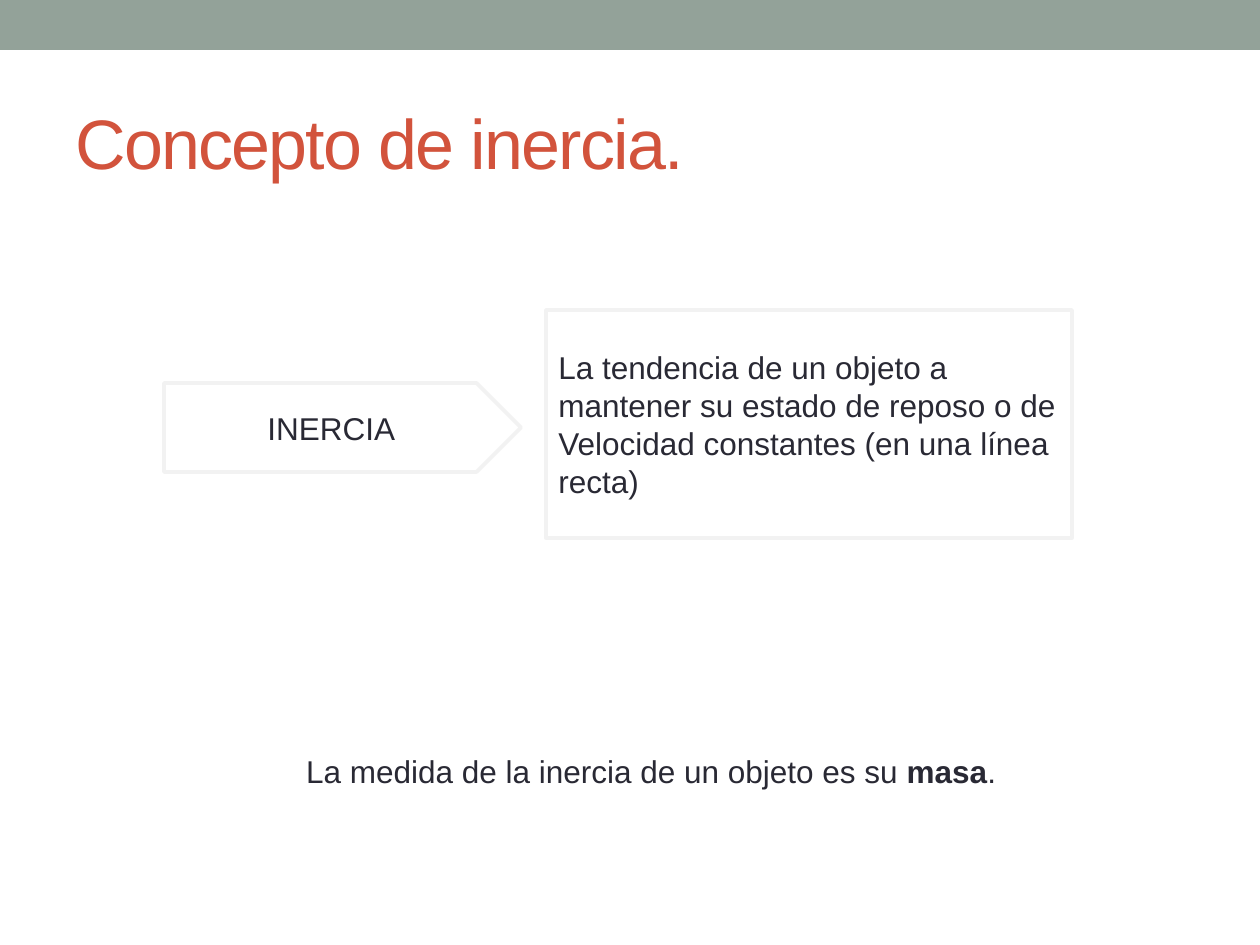
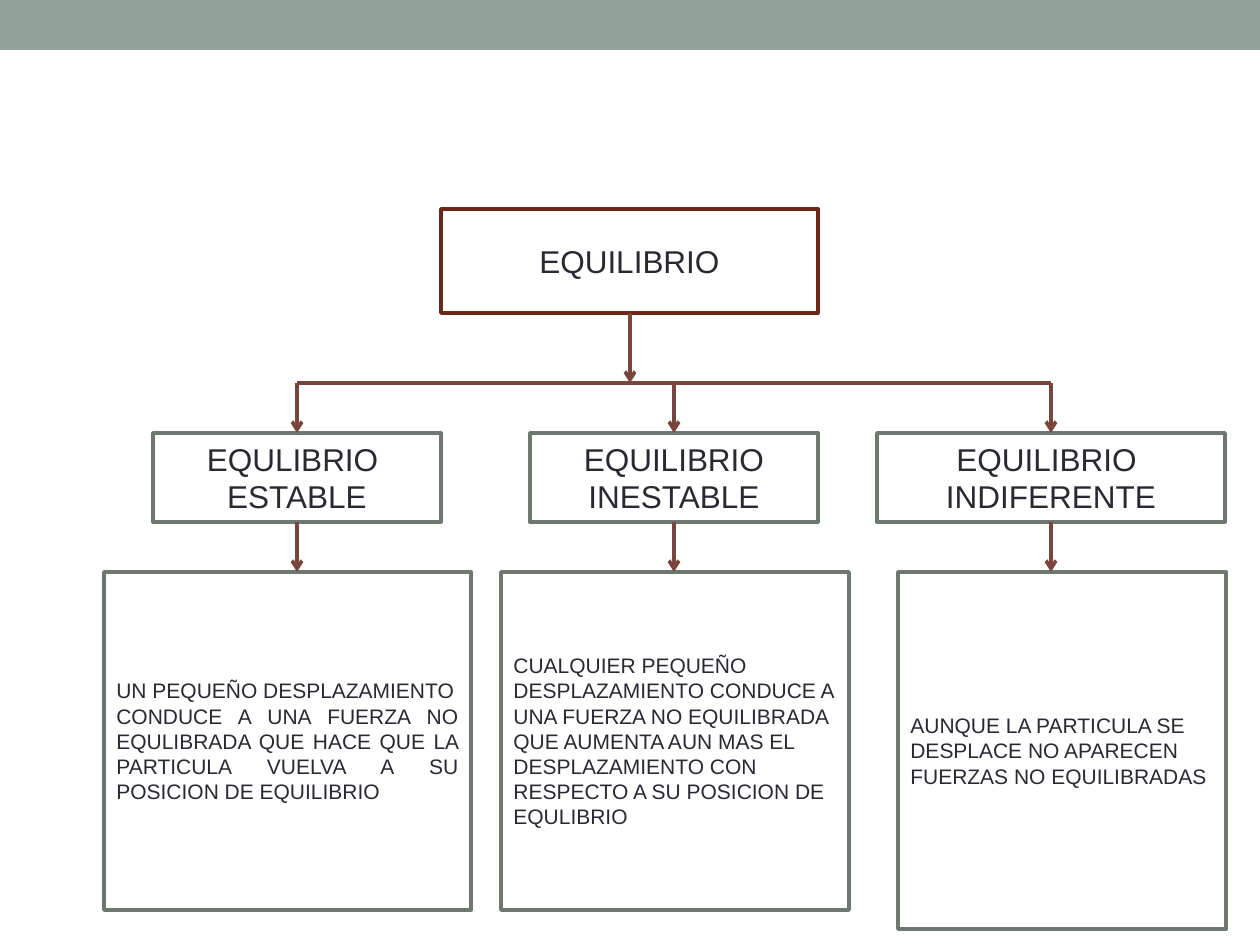
from dataclasses import dataclass

from lxml.etree import SubElement
from pptx import Presentation
from pptx.dml.color import RGBColor
from pptx.enum.shapes import MSO_CONNECTOR, MSO_SHAPE
from pptx.enum.text import MSO_ANCHOR, PP_ALIGN
from pptx.oxml.ns import qn
from pptx.util import Emu, Pt

EMU_PER_PX = 914400 / 126
SLIDE_WIDTH, SLIDE_HEIGHT = 1260, 945
FONT = "Arial"
LINE_WIDTH = Pt(2.08)

BAND_GREEN = RGBColor(0x93, 0xA2, 0x99)
TITLE_RED = RGBColor(0xD2, 0x53, 0x3C)
TEXT_DARK = RGBColor(0x29, 0x29, 0x34)
PALE_GREY = RGBColor(0xF2, 0xF2, 0xF2)
ROOT_BROWN = RGBColor(0x6E, 0x26, 0x19)
NODE_GREY = RGBColor(0x6D, 0x78, 0x71)
ARROW_BROWN = RGBColor(0x79, 0x46, 0x3D)

# Heading lines, heading width, detail paragraphs, detail width, detail height, alignment
BRANCHES = [
    (["EQULIBRIO ", "ESTABLE"], 288,
     ["UN PEQUEÑO DESPLAZAMIENTO",
      "CONDUCE A UNA FUERZA NO EQULIBRADA QUE HACE QUE LA PARTICULA VUELVA A SU "
      "POSICION DE EQUILIBRIO"], 367, 338, PP_ALIGN.JUSTIFY),
    (["EQUILIBRIO", "INESTABLE"], 288,
     ["CUALQUIER PEQUEÑO DESPLAZAMIENTO CONDUCE A UNA FUERZA NO EQUILIBRADA QUE "
      "AUMENTA AUN MAS EL DESPLAZAMIENTO CON RESPECTO A SU POSICION DE EQULIBRIO"],
     348, 338, PP_ALIGN.LEFT),
    (["EQUILIBRIO ", "INDIFERENTE"], 348,
     ["AUNQUE LA PARTICULA SE DESPLACE NO APARECEN FUERZAS NO EQUILIBRADAS"],
     328, 357, PP_ALIGN.LEFT),
]


def px(length):
    return Emu(round(length * EMU_PER_PX))


@dataclass
class Box:
    left: int
    top: int
    width: int
    height: int

    def inside(self, left, top, width, height):
        """Return a box whose corner is measured from this one's."""
        return Box(self.left + left, self.top + top, width, height)

    def emu(self):
        return [px(length) for length in (self.left, self.top, self.width, self.height)]


def write_text(shape, paragraphs, size=18, color=TEXT_DARK, align=PP_ALIGN.CENTER):
    """Fill a shape; a paragraph is a string or a list of (text, bold) runs."""
    frame = shape.text_frame
    frame.word_wrap = True
    frame.vertical_anchor = MSO_ANCHOR.MIDDLE
    for index, runs in enumerate(paragraphs):
        paragraph = frame.add_paragraph() if index else frame.paragraphs[0]
        paragraph.alignment = align
        for text, bold in [(runs, False)] if isinstance(runs, str) else runs:
            run = paragraph.add_run()
            run.text = text
            font = run.font
            font.name, font.size, font.bold = FONT, Pt(size), bold
            font.color.rgb = color


def add_text(slide, box, paragraphs, **style):
    shape = slide.shapes.add_textbox(*box.emu())
    write_text(shape, paragraphs, **style)
    return shape


def add_node(slide, box, paragraphs, outline, preset=MSO_SHAPE.RECTANGLE, **style):
    shape = slide.shapes.add_shape(preset, *box.emu())
    shape.shadow.inherit = False
    shape.fill.background()
    shape.line.color.rgb = outline
    shape.line.width = LINE_WIDTH
    write_text(shape, paragraphs, **style)


def add_line(slide, box, arrow=True):
    """Draw a line from the box's top left corner to its bottom right one."""
    left, top, width, height = box.emu()
    line = slide.shapes.add_connector(
        MSO_CONNECTOR.STRAIGHT, left, top, left + width, top + height)
    line.line.color.rgb = ARROW_BROWN
    line.line.width = LINE_WIDTH
    if arrow:
        SubElement(line.line._get_or_add_ln(), qn("a:tailEnd"), type="arrow")
    SubElement(line._element.spPr, qn("a:effectLst"))


def add_banded_slide(presentation):
    slide = presentation.slides.add_slide(presentation.slide_layouts[6])
    band = slide.shapes.add_shape(
        MSO_SHAPE.RECTANGLE, *Box(0, 0, SLIDE_WIDTH, 50).emu())
    band.shadow.inherit = False
    band.fill.solid()
    band.fill.fore_color.rgb = BAND_GREEN
    band.line.fill.background()
    return slide


def add_title(slide, box, text):
    shape = add_text(slide, box, [text], size=40, color=TITLE_RED, align=PP_ALIGN.LEFT)
    run = shape.text_frame.paragraphs[0].runs[0]
    run.font._element.set("spc", "-100")


def add_definition(slide, box):
    add_node(slide, box.inside(0, 73, 357, 89), ["INERCIA"], PALE_GREY,
             preset=MSO_SHAPE.PENTAGON)
    add_node(slide, box.inside(382, 0, 526, 228),
             ["La tendencia de un objeto a mantener su estado de reposo o de",
              "Velocidad constantes (en una línea recta)"],
             PALE_GREY, align=PP_ALIGN.LEFT)
    add_text(slide, box.inside(45, 411, 893, 100),
             [[("La medida de la inercia de un objeto es su", False),
               (" masa", True), (". ", False)]])


def add_tree(slide, box):
    """Draw the root, the line that splits from it, and one column per branch."""
    first_center, center_step, detail_step = 193, 377, 397
    root_height, split_top, heading_top, heading_height, detail_top = 104, 174, 224, 89, 363
    heading_bottom = heading_top + heading_height

    add_node(slide, box.inside(337, 0, 377, root_height), ["EQUILIBRIO"], ROOT_BROWN)
    add_line(slide, box.inside(526, root_height, 0, split_top - root_height))
    add_line(slide, box.inside(first_center, split_top,
                               center_step * (len(BRANCHES) - 1), 0), arrow=False)
    for index, branch in enumerate(BRANCHES):
        heading, heading_width, detail, detail_width, detail_height, align = branch
        center = first_center + index * center_step
        add_node(slide, box.inside(center - heading_width // 2, heading_top,
                                   heading_width, heading_height), heading, NODE_GREY)
        add_node(slide, box.inside(index * detail_step, detail_top,
                                   detail_width, detail_height),
                 detail, NODE_GREY, size=12, align=align)
        for start, end in ((split_top, heading_top), (heading_bottom, detail_top)):
            add_line(slide, box.inside(center, start, 0, end - start))


def main():
    presentation = Presentation()
    presentation.slide_width, presentation.slide_height = px(SLIDE_WIDTH), px(SLIDE_HEIGHT)

    inertia = add_banded_slide(presentation)
    add_title(inertia, Box(63, 73, 1134, 136), "Concepto de inercia.")
    add_definition(inertia, Box(164, 310, 938, 511))

    equilibrium = add_banded_slide(presentation)
    add_tree(equilibrium, Box(104, 209, 1122, 720))

    presentation.save("out.pptx")


if __name__ == "__main__":
    main()
